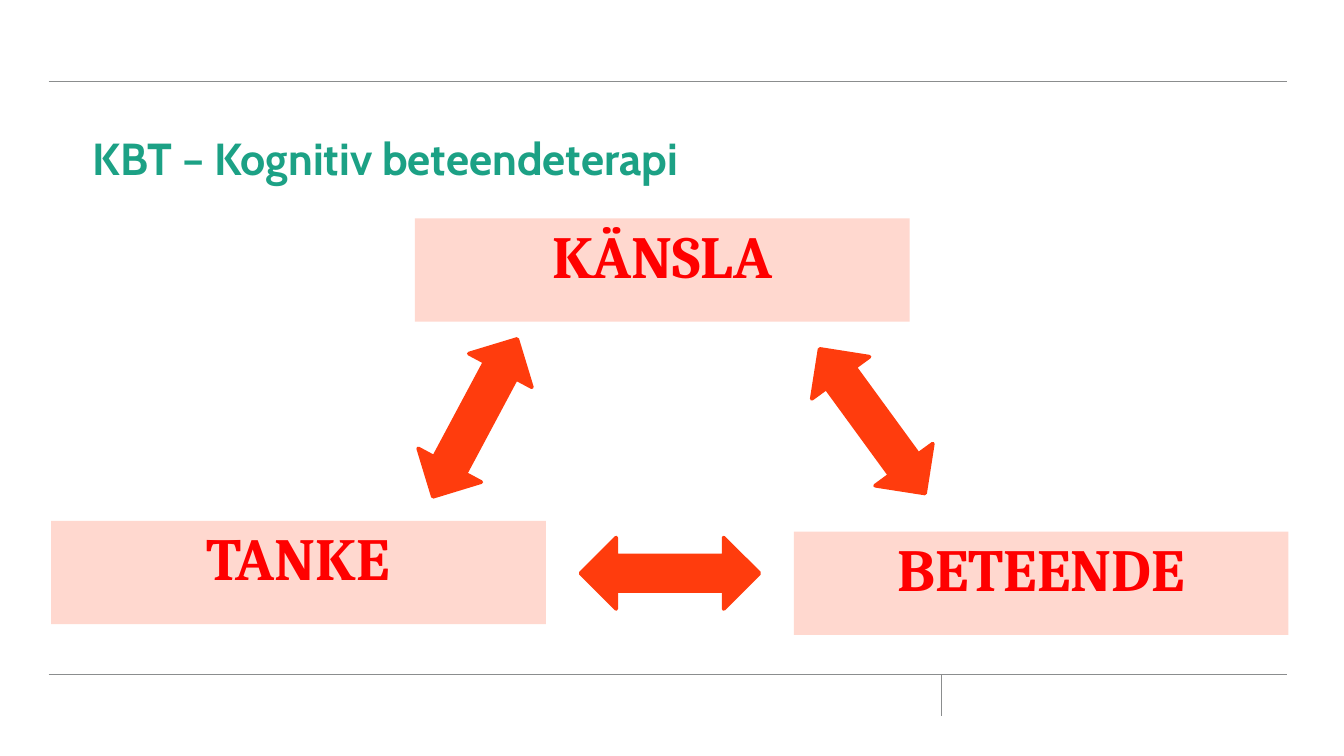
"""Build a slide showing the CBT triangle of feeling, thought and behaviour."""
from lxml.etree import SubElement
from pptx import Presentation
from pptx.dml.color import RGBColor
from pptx.enum.shapes import MSO_CONNECTOR, MSO_SHAPE
from pptx.enum.text import MSO_ANCHOR, PP_ALIGN
from pptx.oxml.ns import qn
from pptx.util import Pt

PX = 5715
SLIDE = (1600, 900)
COLORS = {"rule": "8B8D8E", "title": "1CA185", "box": "FFD8CF",
          "label": "FF0000", "arrow": "FF3C0D"}
TITLE = "KBT – Kognitiv beteendeterapi"
RULES = [(58, 97, 1532, 97), (58, 803, 1532, 803), (1120, 803, 1120, 853)]
BOXES = [("KÄNSLA", 494, 260), ("BETEENDE", 945, 633), ("TANKE", 61, 620)]
ARROWS = [(691, 640, 0), (932, 459, 53.9), (459, 455, 118.1)]
BOX = (589, 123)
ARROW = (213, 85)


def emu(*vals):
    return [v * PX for v in vals]


def color(name):
    return RGBColor.from_string(COLORS[name])


def style(par, font, size, name, align):
    par.alignment = align
    for run in par.runs:
        run.font.name = font
        run.font.size = Pt(size)
        run.font.bold = True
        run.font.color.rgb = color(name)


def add_rule(slide, ends):
    rule = slide.shapes.add_connector(MSO_CONNECTOR.STRAIGHT, *emu(*ends))
    rule.line.color.rgb = color("rule")
    rule.line.width = Pt(0.25)
    SubElement(rule._element.spPr, qn("a:effectLst"))


def add_shape(slide, kind, left, top, size, fill):
    shape = slide.shapes.add_shape(kind, *emu(left, top, *size))
    shape.shadow.inherit = False
    shape.fill.solid()
    shape.fill.fore_color.rgb = color(fill)
    return shape


def add_box(slide, text, left, top):
    box = add_shape(slide, MSO_SHAPE.RECTANGLE, left, top, BOX, "box")
    box.line.fill.background()
    frame = box.text_frame
    frame.margin_top = 0
    frame.vertical_anchor = MSO_ANCHOR.TOP
    frame.text = text
    style(frame.paragraphs[0], "Cambria", 32, "label", PP_ALIGN.CENTER)


def add_arrow(slide, left, top, angle):
    arrow = add_shape(slide, MSO_SHAPE.LEFT_RIGHT_ARROW, left, top, ARROW, "arrow")
    arrow.line.color.rgb = color("arrow")
    arrow.line.width = Pt(2)
    arrow.rotation = angle


def set_title(slide):
    title = slide.shapes.title
    title.left, title.top, title.width, title.height = emu(94, 143, 946, 85)
    frame = title.text_frame
    frame.text = TITLE
    frame.word_wrap = True
    frame.vertical_anchor = MSO_ANCHOR.BOTTOM
    style(frame.paragraphs[0], "Cabin", 24, "title", PP_ALIGN.LEFT)


def main():
    deck = Presentation()
    deck.slide_width, deck.slide_height = emu(*SLIDE)
    slide = deck.slides.add_slide(deck.slide_layouts[5])
    for ends in RULES:
        add_rule(slide, ends)
    set_title(slide)
    for box in BOXES:
        add_box(slide, *box)
    for arrow in ARROWS:
        add_arrow(slide, *arrow)
    deck.save("out.pptx")


if __name__ == "__main__":
    main()
